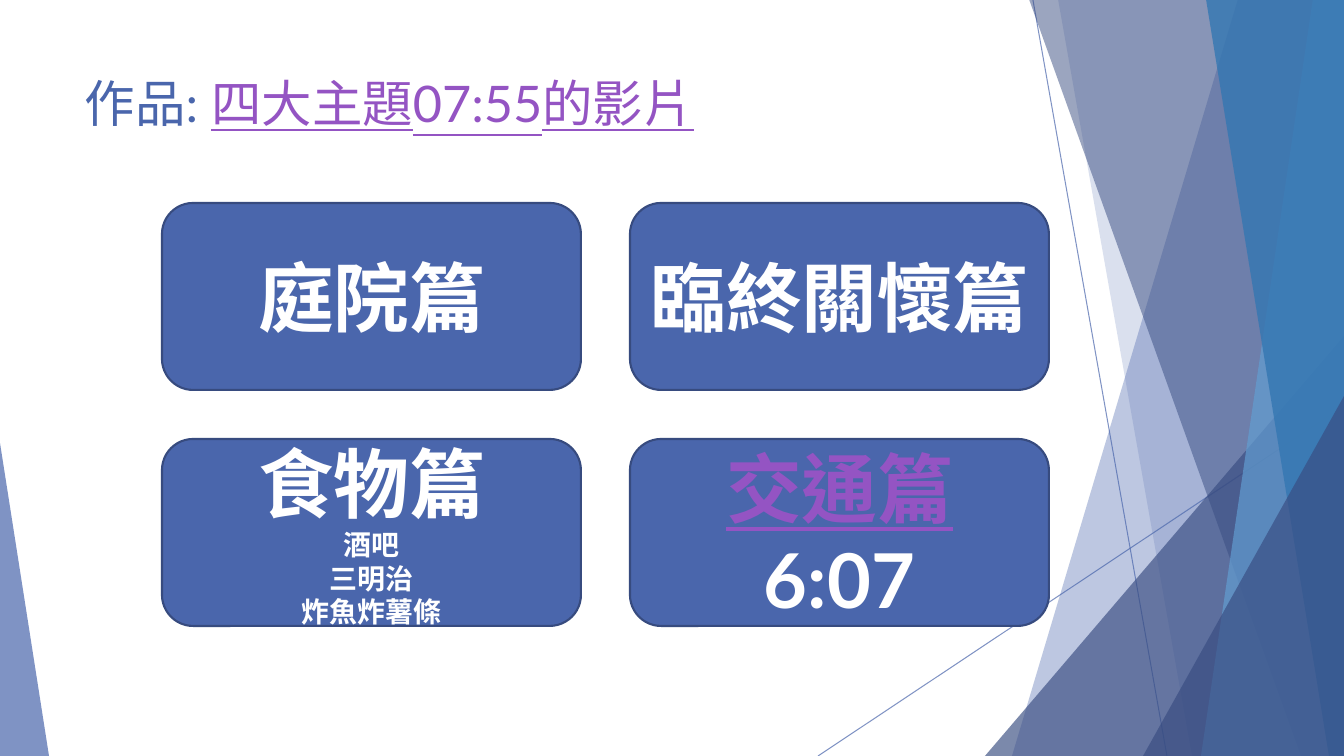
from dataclasses import dataclass
from typing import Any

from lxml.etree import SubElement as Sub
from pptx import Presentation
from pptx.dml.color import RGBColor as Rgb
from pptx.enum.lang import MSO_LANGUAGE_ID as Lang
from pptx.enum.shapes import MSO_CONNECTOR as Link, MSO_SHAPE as Kind
from pptx.enum.text import MSO_ANCHOR as Anchor, PP_ALIGN as Align
from pptx.oxml.ns import qn
from pptx.util import Emu, Pt

WIDE, HIGH = 1344, 756


def px(size: int) -> Emu:
    return Emu(round(size * 914400 / 100.8))


@dataclass(frozen=True)
class Theme:
    font: str = "Lato"
    blue: str = "4A66AC"
    navy: str = "384C81"
    edge: str = "374B7F"
    sky: str = "629DD1"
    teal: str = "3477B2"
    white: str = "FFFFFF"
    link: str = "9454C3"
    title: int = 36
    head: int = 54
    note: int = 20


@dataclass(frozen=True)
class Ray:
    start: tuple[int, int]
    end: tuple[int, int]


@dataclass(frozen=True)
class Band:
    top: int
    foot: int
    color: str
    alpha: int


@dataclass(frozen=True)
class Wedge:
    left: int
    top: int
    width: int
    tip: int
    color: str
    alpha: int


@dataclass(frozen=True)
class Span:
    text: str
    color: str
    line: bool = False


@dataclass(frozen=True)
class Para:
    spans: tuple[Span, ...]
    size: int


LOOK = Theme()
RAYS = (Ray((1033, 0), (1167, HIGH)), Ray((WIDE, 406), (818, HIGH)))
DECOR = (
    Band(1238, 1012, LOOK.blue, 36),
    Band(1058, 1192, LOOK.blue, 20),
    Wedge(985, 336, 359, 1, LOOK.navy, 66),
    Band(1029, 1301, LOOK.navy, 50),
    Band(1313, 1201, LOOK.sky, 70),
    Band(1206, 1329, LOOK.teal, 80),
    Wedge(1143, 396, 201, 1, LOOK.navy, 66),
    Wedge(0, 443, 49, 0, LOOK.blue, 70),
)
TITLE = Para((Span("作品: ", LOOK.blue),
              Span("四大主題07:55的影片", LOOK.link, True)), LOOK.title)


def plain(text: str, size: int) -> Para:
    return Para((Span(text, LOOK.white),), size)


CARDS = (
    (plain("庭院篇", LOOK.head),),
    (plain("臨終關懷篇", LOOK.head),),
    (plain("食物篇", LOOK.head),
     *(plain(food, LOOK.note) for food in ("酒吧", "三明治", "炸魚炸薯條"))),
    (Para((Span("交通篇", LOOK.link, True), Span(" 6:07", LOOK.white)), LOOK.head),),
)


def paint(fill: Any, color: str) -> None:
    fill.solid()
    fill.fore_color.rgb = Rgb.from_string(color)


def fade(part: Any, alpha: int) -> None:
    tone = next(part.iter(qn("a:srgbClr")))
    Sub(tone, qn("a:alpha"), val=str(alpha * 1000))


def veil(shape: Any, color: str, alpha: int) -> None:
    paint(shape.fill, color)
    fade(shape.element.spPr, alpha)
    shape.line.fill.background()
    shape.shadow.inherit = False


def draw_ray(shapes: Any, ray: Ray) -> None:
    ends = (px(n) for n in ray.start + ray.end)
    line = shapes.add_connector(Link.STRAIGHT, *ends)
    paint(line.line.fill, LOOK.blue)
    line.line.width = Pt(0.75)
    fade(line.element.spPr, 70)
    Sub(line.element.spPr, qn("a:effectLst"))


def draw_band(shapes: Any, band: Band) -> None:
    path = shapes.build_freeform(px(band.top), px(-1))
    points = ((WIDE, -1), (WIDE, HIGH), (band.foot, HIGH))
    path.add_line_segments([(px(x), px(y)) for x, y in points], close=True)
    veil(path.convert_to_shape(), band.color, band.alpha)


def draw_wedge(shapes: Any, wedge: Wedge) -> None:
    shape = shapes.add_shape(Kind.ISOSCELES_TRIANGLE, px(wedge.left), px(wedge.top),
                             px(wedge.width), px(HIGH - wedge.top))
    shape.adjustments[0] = wedge.tip
    veil(shape, wedge.color, wedge.alpha)


def write(para: Any, data: Para, bold: bool, align: Align) -> None:
    para.alignment = align
    para.font.name = LOOK.font
    para.font.size = Pt(data.size)
    para.font.bold = bold
    for span in data.spans:
        run = para.add_run()
        run.text = span.text
        run.font.color.rgb = Rgb.from_string(span.color)
        run.font.underline = span.line
        run.font.language_id = Lang.TRADITIONAL_CHINESE


def draw_title(shapes: Any) -> None:
    frame = shapes.add_textbox(px(75), px(67), px(948), px(145)).text_frame
    frame.word_wrap = True
    write(frame.paragraphs[0], TITLE, False, Align.LEFT)


def draw_card(shapes: Any, spot: int, paras: tuple[Para, ...]) -> None:
    row, col = divmod(spot, 2)
    card = shapes.add_shape(Kind.FLOWCHART_ALTERNATE_PROCESS, px(162 + 468 * col),
                            px(203 + 236 * row), px(419), px(187))
    paint(card.fill, LOOK.blue)
    paint(card.line.fill, LOOK.edge)
    card.line.width = Pt(1.5)
    card.shadow.inherit = False
    frame = card.text_frame
    frame.word_wrap = True
    frame.vertical_anchor = Anchor.MIDDLE
    for i, data in enumerate(paras):
        para = frame.add_paragraph() if i else frame.paragraphs[0]
        write(para, data, True, Align.CENTER)


def main() -> None:
    deck = Presentation()
    deck.slide_width, deck.slide_height = px(WIDE), px(HIGH)
    shapes = deck.slides.add_slide(deck.slide_layouts[6]).shapes
    for ray in RAYS:
        draw_ray(shapes, ray)
    for item in DECOR:
        if isinstance(item, Band):
            draw_band(shapes, item)
        else:
            draw_wedge(shapes, item)
    draw_title(shapes)
    for spot, paras in enumerate(CARDS):
        draw_card(shapes, spot, paras)
    deck.save("out.pptx")


if __name__ == "__main__":
    main()
